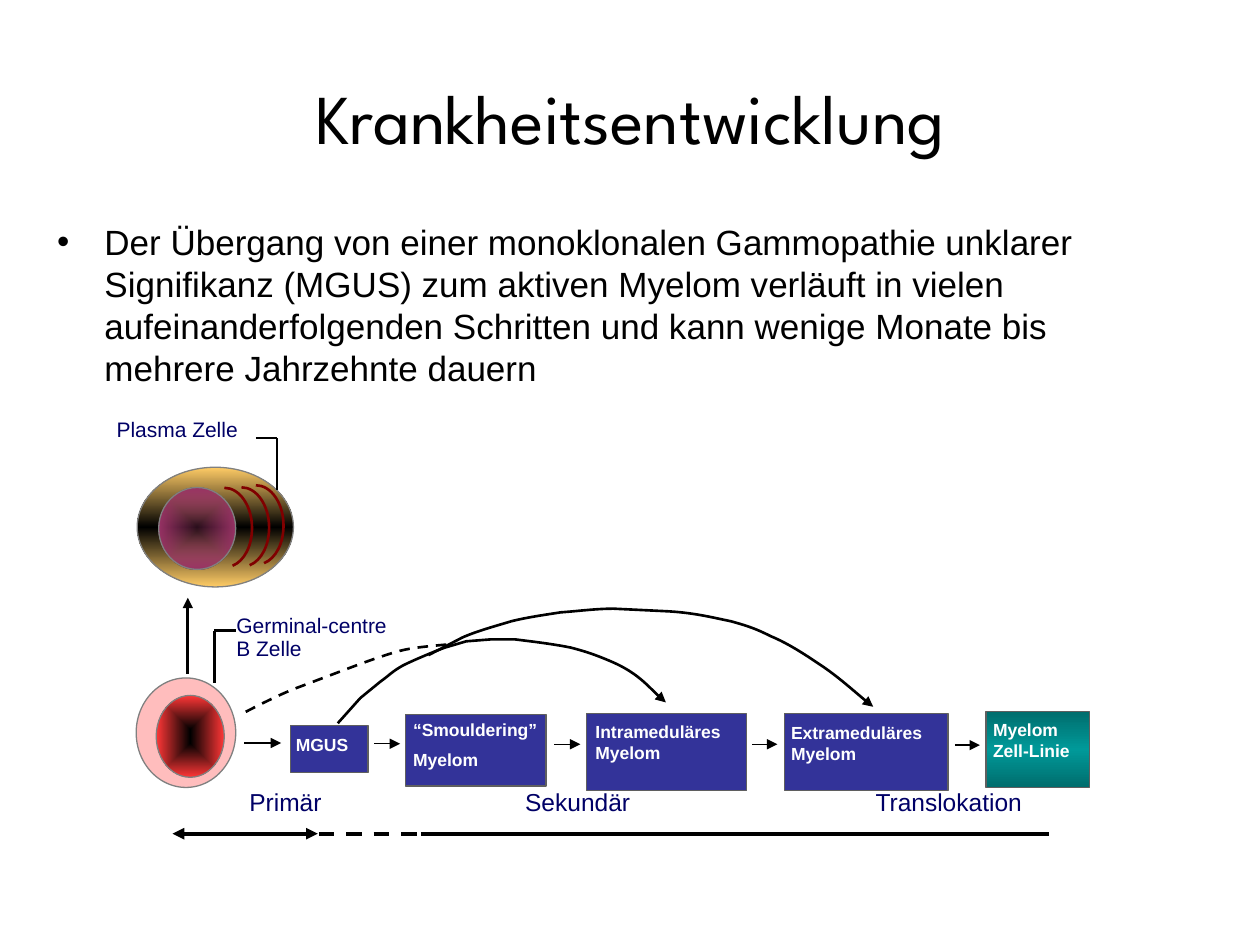
"""Build a slide on how a myeloma develops, from MGUS to cell line."""
from lxml import etree
from pptx import Presentation
from pptx.dml.color import RGBColor
from pptx.enum.dml import MSO_LINE
from pptx.enum.shapes import MSO_CONNECTOR, MSO_SHAPE
from pptx.enum.text import MSO_ANCHOR, PP_ALIGN
from pptx.oxml import parse_xml
from pptx.oxml.ns import nsdecls, qn
from pptx.util import Pt

DASH = MSO_LINE.DASH
LINE = MSO_CONNECTOR.STRAIGHT
RECT, OVAL = MSO_SHAPE.RECTANGLE, MSO_SHAPE.OVAL
LEFT, MID = PP_ALIGN.LEFT, PP_ALIGN.CENTER
TOP, CORE = MSO_ANCHOR.TOP, MSO_ANCHOR.MIDDLE


class Theme:
    font, head = "Arial", "League Spartan"
    title, body, phase, cell, step = 40, 20, 14, 12, 10
    black, white, navy = "000000", "FFFFFF", "000066"
    blue, edge, rim, arc = "333399", "5F5F5F", "808080", "800000"
    pink, red, plum, gold, teal = "FFBDBD", "FF3737", "993366", "FFCC66", "009999"


deck = Presentation()
deck.slide_width, deck.slide_height = Pt(720), Pt(540)
slide = deck.slides.add_slide(deck.slide_layouts[6])
shapes = slide.shapes


def write(text, at, size, color=Theme.black, font=Theme.font, bold=False,
          align=LEFT, anchor=TOP, space=None, gap=0, bullet=None):
    box = shapes.add_textbox(*map(Pt, at))
    frame = box.text_frame
    frame.word_wrap = True
    frame.vertical_anchor = anchor
    frame.text = text
    for i, para in enumerate(frame.paragraphs):
        para.alignment = align
        para.line_spacing = space
        para.space_before = Pt(gap if i else 0)
        for run in para.runs:
            run.font.name, run.font.size, run.font.bold = font, Pt(size), bold
            run.font.color.rgb = RGBColor.from_string(color)
        if bullet:
            props = para._p.get_or_add_pPr()
            props.set("marL", str(Pt(27)))
            props.set("indent", str(-Pt(27)))
            etree.SubElement(props, qn("a:buFont"), typeface=font)
            etree.SubElement(props, qn("a:buChar"), char=bullet)


def stroke(shape, width, color=Theme.black, dash=None, ends=()):
    shape.line.color.rgb = RGBColor.from_string(color)
    shape.line.width = Pt(width)
    if dash:
        shape.line.dash_style = dash
    props = shape.element.spPr
    for end in ends:
        etree.SubElement(props.find(qn("a:ln")), qn(f"a:{end}End"), type="triangle")
    etree.SubElement(props, qn("a:effectLst"))


write("Krankheitsentwicklung", (36, 21.6, 648, 90), Theme.title,
      font=Theme.head, align=MID, anchor=CORE)
write("Der Übergang von einer monoklonalen Gammopathie unklarer Signifikanz (MGUS) "
      "zum aktiven Myelom verläuft in vielen aufeinanderfolgenden Schritten und "
      "kann wenige Monate bis mehrere Jahrzehnte dauern",
      (25.6, 122.4, 648, 356.4), Theme.body, bullet="•")

down = '<a:lin ang="5400000" scaled="1"/>'
burst = ('<a:path path="shape"><a:fillToRect l="50000" t="50000" '
         'r="50000" b="50000"/></a:path>')
thin, dim = '<a:alpha val="27000"/>', '<a:shade val="46275"/>'
forms = [
    (OVAL, (78.4, 267, 89.3, 68.4), Theme.rim, down,
     [(0, Theme.gold, ""), (50, Theme.black, ""), (100, Theme.gold, "")]),
    (OVAL, (90.7, 278.6, 44, 46.8), Theme.rim, burst,
     [(0, Theme.plum, thin), (100, Theme.plum, "")]),
    (OVAL, (77.8, 387.4, 56.9, 62.6), Theme.rim, None, Theme.pink),
    (OVAL, (89.3, 397.4, 38.9, 46.8), Theme.rim, burst,
     [(0, Theme.black, ""), (100, Theme.red, "")]),
    (RECT, (166, 414.7, 44.3, 26.6), Theme.edge, None, Theme.blue),
    (RECT, (231.8, 408.2, 80.3, 41), Theme.edge, None, Theme.blue),
    (RECT, (335.3, 407.9, 91.4, 43.9), Theme.edge, None, Theme.blue),
    (RECT, (448.4, 407.9, 93.3, 43.9), Theme.edge, None, Theme.blue),
    (RECT, (563.4, 406.5, 59, 43.6), Theme.edge, down,
     [(0, Theme.teal, dim), (50, Theme.teal, ""), (100, Theme.teal, dim)]),
]
for kind, at, edge, way, paint in forms:
    form = shapes.add_shape(kind, *map(Pt, at))
    if way:
        stops = "".join(
            f'<a:gs pos="{pos * 1000}"><a:srgbClr val="{tint}">{mod}</a:srgbClr></a:gs>'
            for pos, tint, mod in paint)
        form.fill.gradient()
        props = form.element.spPr
        props.replace(props.find(qn("a:gradFill")), parse_xml(
            f'<a:gradFill {nsdecls("a")} rotWithShape="1">'
            f'<a:gsLst>{stops}</a:gsLst>{way}</a:gradFill>'))
    else:
        form.fill.solid()
        form.fill.fore_color.rgb = RGBColor.from_string(paint)
    stroke(form, 0.75, edge)

curves = [
    ([(193, 413.3), (205.9, 398.9), (217.4, 389.5),
      (222.5, 385.9, 223.9, 383.8, 230.4, 380.2),
      (236.2, 377.3, 248.4, 372.2, 254.2, 370.1),
      (266.4, 366.5), (280.1, 365.4), (294.5, 365.4), (303.1, 366.5),
      (308.9, 367.2, 319, 368.6, 326.2, 370.1),
      (334.1, 372.2, 339.1, 373.7, 349.2, 378),
      (364.3, 384.5, 373, 395.3, 380.5, 401.4)],
     Theme.black, None, ["tail"]),
    ([(140.4, 406.8), (144.7, 404.6, 157, 398.2, 167.8, 393.8), (203.8, 380.2),
      (203.8, 380.2, 221, 373.7, 230.4, 371.5),
      (239.8, 369.4, 254.2, 368.6, 259.2, 367.9)],
     Theme.black, DASH, []),
    ([(244.8, 374.4), (264.2, 364.3),
      (272.2, 360.7, 283, 357.8, 292.3, 355),
      (301, 352.8, 311, 351.4, 320.4, 349.9),
      (330.5, 349.2, 340.6, 347.8, 350.6, 347.8), (379.4, 349.2),
      (396, 349.9, 406.8, 352.8, 417.6, 355),
      (427.7, 357.8, 432, 359.3, 440.6, 363.6),
      (449.3, 367.2, 458.6, 373, 468, 379.4),
      (478.1, 385.9, 492.5, 398.9, 499, 403.9)],
     Theme.black, None, ["tail"]),
]
for x, y in [(128.2, 278.8), (138, 278.5), (146.2, 277.3)]:
    curves.append(([(x, y), (x + 8.6, y, x + 15.8, y + 10.1, x + 15.8, y + 23),
                    (x + 15.8, y + 33.1, x + 11.5, y + 41.8, x + 4.7, y + 44.5)],
                   Theme.arc, None, []))
for knots, color, dash, ends in curves:
    spots = [(Pt(knot[k]), Pt(knot[k + 1]))
             for knot in knots for k in range(0, len(knot), 2)]
    pen = shapes.build_freeform(*spots[0])
    pen.add_line_segments(spots[1:], close=False)
    curve = pen.convert_to_shape()
    steps = iter(list(curve.element.spPr.iter(qn("a:lnTo"))))
    for knot in knots[1:]:
        first = next(steps)
        if len(knot) == 6:
            bend = etree.Element(qn("a:cubicBezTo"))
            first.addprevious(bend)
            for step in (first, next(steps), next(steps)):
                bend.append(step[0])
                step.getparent().remove(step)
    curve.fill.background()
    stroke(curve, 1.5, color, dash, ends)

lines = [
    (146.2, 250.3, 158.4, 250.3, 1, None, []),
    (158.4, 250.3, 158.4, 280.1, 1, None, []),
    (107.3, 385.2, 107.3, 341.6, 1.5, None, ["tail"]),
    (122.4, 360.4, 122.4, 390.2, 1.5, None, []),
    (122.4, 360.4, 134.6, 360.4, 1.5, None, []),
    (98.6, 476.4, 181.6, 476.4, 2.25, None, ["head", "tail"]),
    (182.2, 476.4, 240.5, 476.4, 2.25, DASH, []),
    (240.5, 476.4, 599.6, 476.4, 2.25, None, []),
]
for x, y, wide in [(139.7, 424.6, 20.9), (213.8, 425, 14.8), (316.8, 425.3, 14.8),
                   (429.8, 425.3, 14.4), (545.6, 425.8, 14.4)]:
    lines.append((x, y, x + wide, y, 0.75, None, ["tail"]))
for *at, width, dash, ends in lines:
    stroke(shapes.add_connector(LINE, *map(Pt, at)), width, dash=dash, ends=ends)

for text, at in [("MGUS", (162, 415.9, 47.5, 24.5)),
                 ("“Smouldering”\nMyelom", (229, 407.4, 91.4, 47.5)),
                 ("Intrameduläres\vMyelom", (333.2, 408.6, 95.8, 40.3)),
                 ("Extrameduläres\vMyelom", (445, 409, 95.8, 40.3)),
                 ("Myelom\vZell-Linie", (560.4, 407.5, 72, 39.6))]:
    write(text, at, Theme.step, Theme.white, bold=True, gap=5)

for text, at in [("Plasma Zelle", (59.5, 236.2, 176.4, 25.9)),
                 ("Germinal-centre\vB Zelle", (128, 348.2, 119.5, 42.5))]:
    write(text, at, Theme.cell, Theme.navy, space=0.9)

for text, x in [("Primär", 135.4), ("Sekundär", 293), ("Translokation", 493.2)]:
    write(text, (x, 446.4, 116.6, 31), Theme.phase, Theme.navy)

deck.save("out.pptx")
